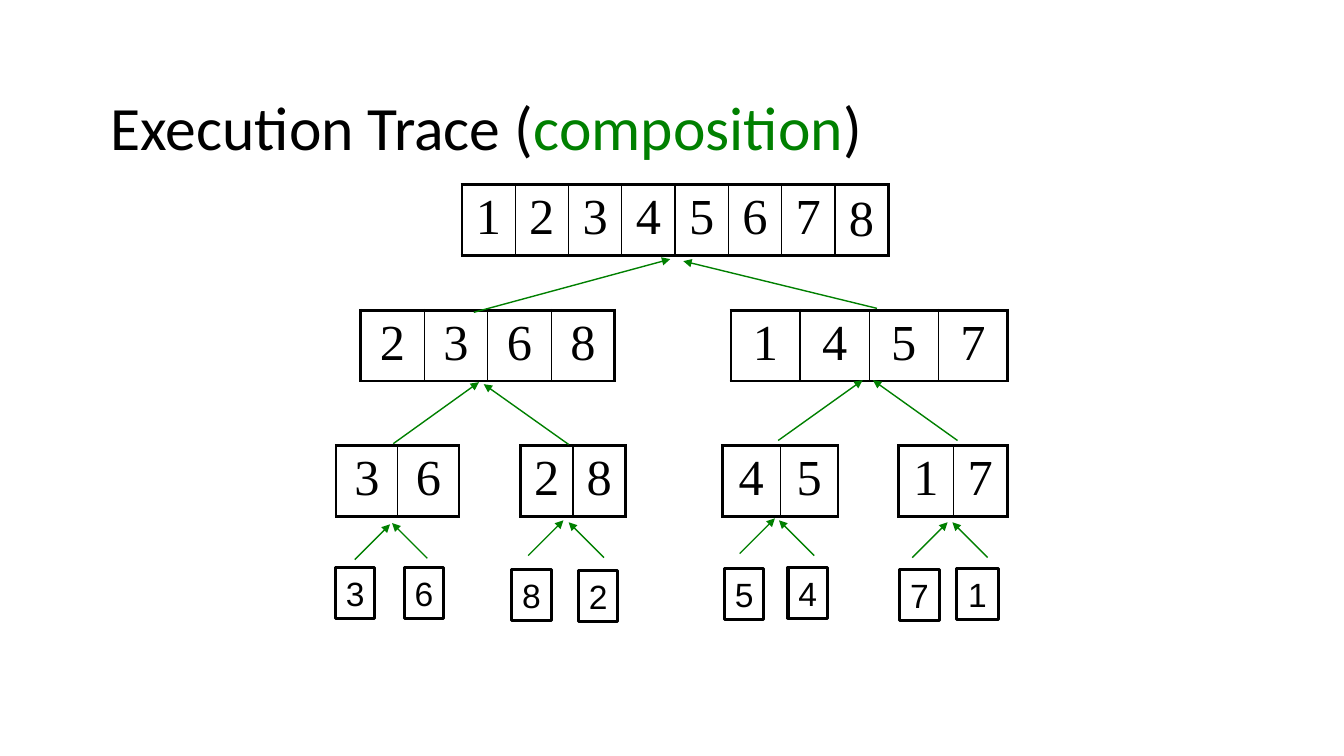
from dataclasses import dataclass

from lxml import etree
from pptx import Presentation
from pptx.dml.color import RGBColor
from pptx.enum.shapes import MSO_CONNECTOR, MSO_SHAPE
from pptx.enum.text import MSO_ANCHOR, MSO_AUTO_SIZE, PP_ALIGN
from pptx.oxml.ns import qn
from pptx.slide import Slide
from pptx.util import Cm, Pt

BLACK = RGBColor(0, 0, 0)
GREEN = RGBColor(0, 128, 0)
LEFT = PP_ALIGN.LEFT
CENTER = PP_ALIGN.CENTER
MIDDLE = MSO_ANCHOR.MIDDLE
TOP = MSO_ANCHOR.TOP
FIXED = MSO_AUTO_SIZE.NONE
GROW = MSO_AUTO_SIZE.SHAPE_TO_FIT_TEXT
RECT = MSO_SHAPE.RECTANGLE
STRAIGHT = MSO_CONNECTOR.STRAIGHT

HEIGHT = 1.78
THICK = 2.25
THIN = 1
STEP = 0.89


@dataclass(frozen=True)
class List:
    x: float
    y: float
    width: float
    items: str
    last: MSO_ANCHOR = TOP


@dataclass(frozen=True)
class Leaf:
    x: float
    y: float
    item: str
    width: float = 0.99
    wrap: bool = False


@dataclass(frozen=True)
class Arrow:
    x: float
    y: float
    tip_x: float
    tip_y: float


@dataclass(frozen=True)
class Tip:
    x: float
    y: float
    side: int


LISTS = [
    List(11.64, 4.65, 10.75, "12345678", MIDDLE),
    List(9.09, 7.82, 6.4, "2368"),
    List(18.42, 7.82, 6.97, "1457"),
    List(8.47, 11.23, 3.1, "36"),
    List(13.12, 11.23, 2.64, "28"),
    List(18.2, 11.23, 2.92, "45"),
    List(22.65, 11.23, 2.74, "17"),
]

LEAVES = [
    Leaf(8.46, 14.3, "3"),
    Leaf(10.19, 14.3, "6"),
    Leaf(12.9, 14.35, "8"),
    Leaf(14.58, 14.38, "2"),
    Leaf(18.26, 14.33, "5"),
    Leaf(19.86, 14.3, "4"),
    Leaf(22.68, 14.35, "7"),
    Leaf(24.1, 14.33, "1", 1.07, True),
]

ARROWS = [
    Arrow(11.94, 7.87, 16.89, 6.53),
    Arrow(22.1, 7.77, 17.22, 6.58),
    Arrow(9.91, 11.18, 12.07, 9.63),
    Arrow(14.33, 11.2, 12.19, 9.68),
    Arrow(19.61, 11.1, 21.74, 9.58),
    Arrow(24.13, 11.1, 22, 9.58),
]

TIPS = [
    Tip(9.83, 13.21, -1),
    Tip(9.88, 13.18, 1),
    Tip(14.2, 13.11, -1),
    Tip(14.33, 13.16, 1),
    Tip(19.53, 13.06, -1),
    Tip(19.63, 13.11, 1),
    Tip(23.88, 13.16, -1),
    Tip(24, 13.16, 1),
]


def add_run(par, text: str, face: str, size: int, color: RGBColor = BLACK) -> None:
    run = par.add_run()
    run.text = text
    run.font.name = face
    run.font.size = Pt(size)
    run.font.color.rgb = color


def add_title(slide: Slide) -> None:
    title = slide.shapes.title
    title.left, title.top = Cm(2.54), Cm(1.69)
    title.width, title.height = Cm(28.79), Cm(3.18)
    frame = title.text_frame
    frame.auto_size = FIXED
    frame.word_wrap = True
    frame.vertical_anchor = MIDDLE
    par = frame.paragraphs[0]
    par.alignment = LEFT
    par.line_spacing = 0.9
    add_run(par, "Execution Trace (", "Calibri", 44)
    add_run(par, "composition", "Calibri", 44, GREEN)
    add_run(par, ")", "Calibri", 44)


def set_edges(cell, first: bool, last: bool) -> None:
    props = cell._tc.get_or_add_tcPr()
    widths = {
        "a:lnL": THICK if first else THIN,
        "a:lnR": THICK if last else THIN,
        "a:lnT": THICK,
        "a:lnB": THICK,
    }
    for spot, (tag, width) in enumerate(widths.items()):
        edge = etree.Element(qn(tag), w=str(Pt(width)))
        fill = etree.SubElement(edge, qn("a:solidFill"))
        etree.SubElement(fill, qn("a:srgbClr"), val=str(BLACK))
        props.insert(spot, edge)


def add_list(slide: Slide, row: List) -> None:
    count = len(row.items)
    table = slide.shapes.add_table(
        1, count, Cm(row.x), Cm(row.y), Cm(row.width), Cm(HEIGHT)
    ).table
    table.first_row = False
    table.horz_banding = False
    for spot, item in enumerate(row.items):
        last = spot == count - 1
        table.columns[spot].width = Cm(row.width / count)
        cell = table.cell(0, spot)
        cell.fill.background()
        cell.vertical_anchor = row.last if last else TOP
        set_edges(cell, spot == 0, last)
        par = cell.text_frame.paragraphs[0]
        par.alignment = CENTER
        space = etree.SubElement(par._p.get_or_add_pPr(), qn("a:spcBef"))
        etree.SubElement(space, qn("a:spcPct"), val="20000")
        add_run(par, item, "Times New Roman", 36)


def add_leaf(slide: Slide, leaf: Leaf) -> None:
    box = slide.shapes.add_shape(
        RECT, Cm(leaf.x), Cm(leaf.y), Cm(leaf.width), Cm(1.28)
    )
    box.shadow.inherit = False
    box.fill.background()
    box.line.color.rgb = BLACK
    box.line.width = Pt(THICK)
    frame = box.text_frame
    frame.word_wrap = leaf.wrap
    frame.auto_size = GROW
    frame.vertical_anchor = TOP
    par = frame.paragraphs[0]
    par.alignment = CENTER
    add_run(par, leaf.item, "Arial", 24)


def add_arrow(slide: Slide, arrow: Arrow) -> None:
    link = slide.shapes.add_connector(
        STRAIGHT, Cm(arrow.x), Cm(arrow.y), Cm(arrow.tip_x), Cm(arrow.tip_y)
    )
    link.line.color.rgb = GREEN
    link.line.width = Pt(THIN)
    etree.SubElement(link.line._get_or_add_ln(), qn("a:tailEnd"), type="triangle")
    etree.SubElement(link._element.spPr, qn("a:effectLst"))


def main() -> None:
    deck = Presentation()
    deck.slide_width, deck.slide_height = Cm(33.87), Cm(19.05)
    slide = deck.slides.add_slide(deck.slide_layouts[5])
    add_title(slide)
    for row in LISTS:
        add_list(slide, row)
    for leaf in LEAVES:
        add_leaf(slide, leaf)
    for arrow in ARROWS:
        add_arrow(slide, arrow)
    for tip in TIPS:
        add_arrow(slide, Arrow(tip.x + tip.side * STEP, tip.y + STEP, tip.x, tip.y))
    deck.save("out.pptx")


if __name__ == "__main__":
    main()
